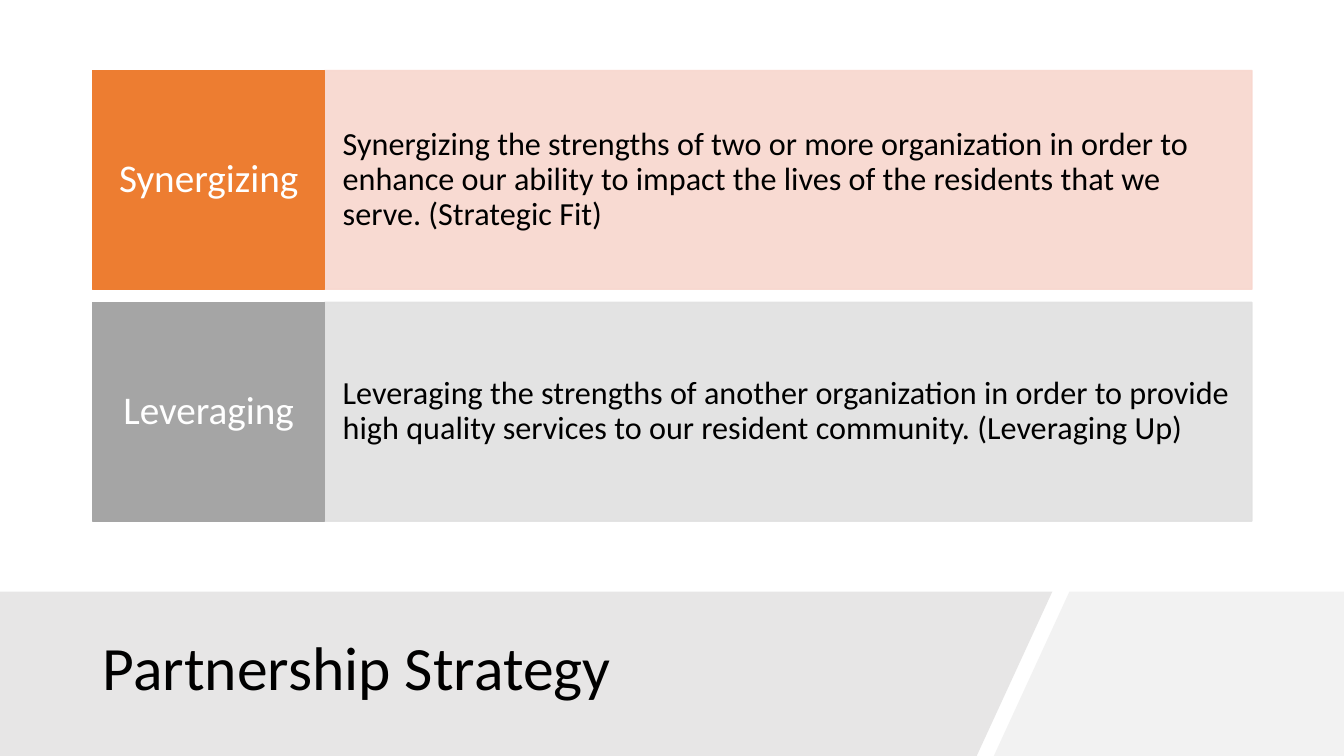
"""Build the Partnership Strategy slide."""
from typing import NamedTuple

from lxml.etree import SubElement
from pptx import Presentation
from pptx.dml.color import RGBColor
from pptx.enum.shapes import MSO_SHAPE
from pptx.enum.text import MSO_ANCHOR, MSO_AUTO_SIZE, PP_ALIGN
from pptx.oxml.ns import qn
from pptx.shapes.autoshape import Shape
from pptx.slide import Slide
from pptx.util import Pt

WIDTH, HEIGHT = 960, 540
LEFT, TOP = 66.24, 50.4
LABEL, BODY = 165.6, 662.4
TALL, STEP = 156.24, 165.6
FLOOR = 422.64


class Band(NamedTuple):
    """A slanted area at the foot of the slide."""
    color: str
    points: list[tuple[float, float]]


class Row(NamedTuple):
    """A labelled strategy."""
    label: str
    body: str
    dark: str
    pale: str


BANDS = [
    Band("F2F2F2", [(763.92, FLOOR), (WIDTH, FLOOR), (WIDTH, HEIGHT), (709.92, HEIGHT)]),
    Band("E7E6E6", [(0, FLOOR), (751.68, FLOOR), (697.68, HEIGHT), (0, HEIGHT)]),
]
ROWS = [
    Row("Synergizing",
        "Synergizing the strengths of two or more organization in order to enhance our "
        "ability to impact the lives of the residents that we serve. (Strategic Fit)",
        "ED7D31", "F8D7CE"),
    Row("Leveraging",
        "Leveraging the strengths of another organization in order to provide high "
        "quality services to our resident community. (Leveraging Up)",
        "A5A5A5", "E1E1E1"),
]


def paint(fill, color: str, alpha: int = 100) -> None:
    """Give a fill a solid colour with an opacity in percent."""
    fill.solid()
    fill.fore_color.rgb = RGBColor.from_string(color)
    if alpha < 100:
        for tag in fill._xPr.iter(qn("a:srgbClr")):
            if tag.find(qn("a:alpha")) is None:
                SubElement(tag, qn("a:alpha")).set("val", str(alpha * 1000))


def write(shape: Shape, text: str, *, size: float, color: str = "000000",
          align: PP_ALIGN = PP_ALIGN.LEFT, side: float = 7.2, edge: float = 3.6) -> None:
    """Put formatted text in a shape."""
    frame = shape.text_frame
    frame.text = text
    frame.word_wrap = True
    frame.auto_size = MSO_AUTO_SIZE.NONE
    frame.vertical_anchor = MSO_ANCHOR.MIDDLE
    frame.margin_left = frame.margin_right = Pt(side)
    frame.margin_top = frame.margin_bottom = Pt(edge)
    para = frame.paragraphs[0]
    para.alignment = align
    para.line_spacing = 0.9
    font = para.runs[0].font
    font.name, font.size = "Calibri", Pt(size)
    font.color.rgb = RGBColor.from_string(color)


def draw_band(slide: Slide, band: Band) -> None:
    """Draw one slanted area."""
    points = [(Pt(x), Pt(y)) for x, y in band.points]
    maker = slide.shapes.build_freeform(*points[0])
    maker.add_line_segments(points[1:])
    shape = maker.convert_to_shape()
    shape.shadow.inherit = False
    paint(shape.fill, band.color)
    shape.line.fill.background()


def draw_box(slide: Slide, left: float, top: float, width: float,
             color: str, alpha: int = 100) -> Shape:
    """Draw one filled box of a row."""
    box = slide.shapes.add_shape(
        MSO_SHAPE.RECTANGLE, Pt(left), Pt(top), Pt(width), Pt(TALL))
    box.shadow.inherit = False
    box.line.width = Pt(1)
    paint(box.fill, color, alpha)
    paint(box.line.fill, color, alpha)
    return box


def draw_row(slide: Slide, row: Row, top: float) -> None:
    """Draw a strategy's text box and its label box."""
    body = draw_box(slide, LEFT + LABEL, top, BODY, row.pale, 90)
    write(body, row.body, size=23, side=12.96, edge=39.6)
    label = draw_box(slide, LEFT, top, LABEL, row.dark)
    write(label, row.label, size=28, color="FFFFFF",
          align=PP_ALIGN.CENTER, side=8.64, edge=15.12)


def main() -> None:
    """Build and save the deck."""
    deck = Presentation()
    deck.slide_width, deck.slide_height = Pt(WIDTH), Pt(HEIGHT)
    slide = deck.slides.add_slide(deck.slide_layouts[5])
    for band in BANDS:
        draw_band(slide, band)
    title = slide.shapes.title
    slide.shapes.element.append(title.element)
    title.left, title.top = Pt(LEFT), Pt(435.6)
    title.width, title.height = Pt(635.76), Pt(86.4)
    write(title, "Partnership Strategy", size=44)
    for index, row in enumerate(ROWS):
        draw_row(slide, row, TOP + index * STEP)
    deck.save("out.pptx")


if __name__ == "__main__":
    main()
